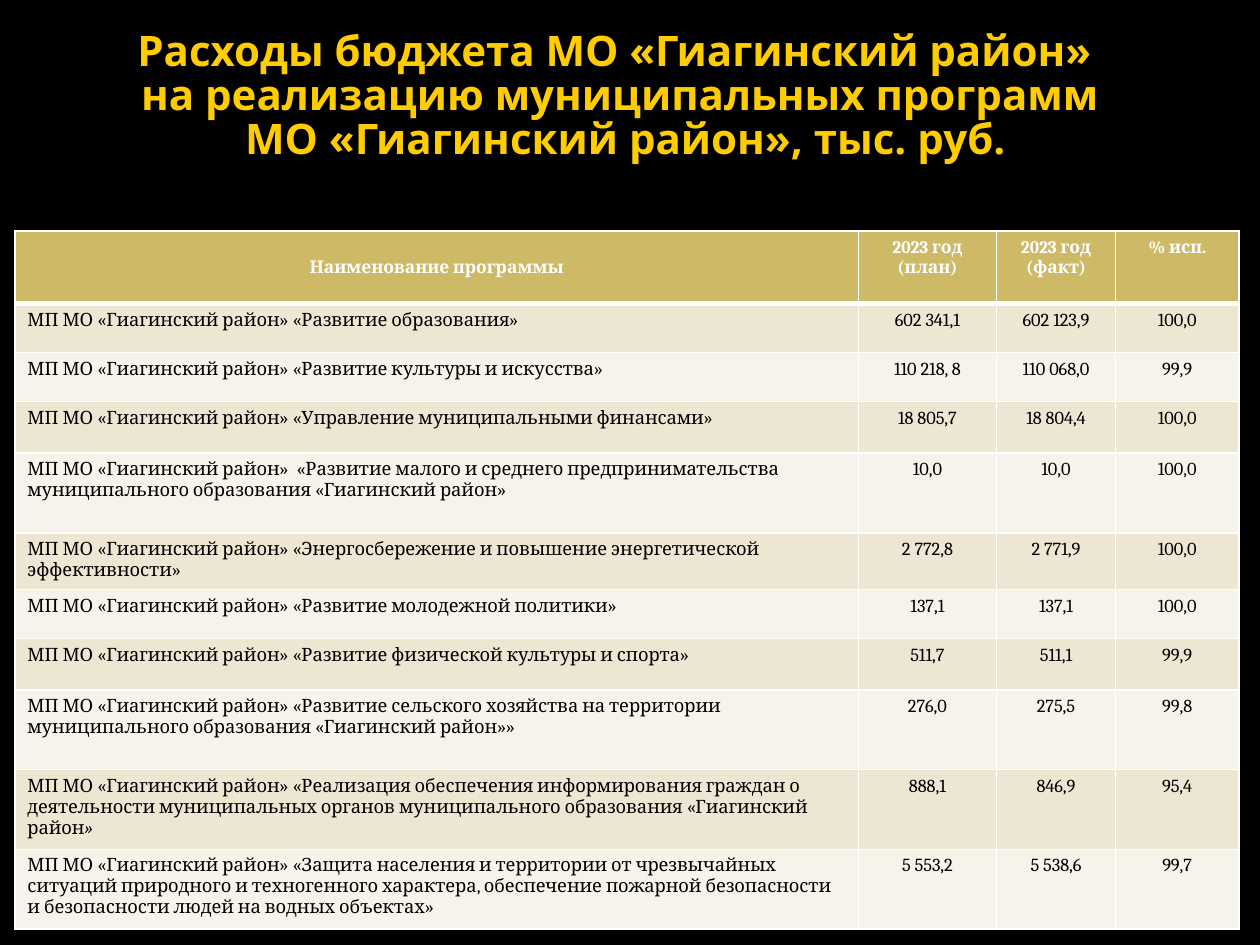
from pptx import Presentation
from pptx.dml.color import RGBColor
from pptx.enum.text import MSO_ANCHOR, PP_ALIGN
from pptx.oxml.ns import qn
from pptx.util import Pt
from lxml.etree import SubElement

TITLE = ("Расходы бюджета МО «Гиагинский район» \v"
         "на реализацию муниципальных программ\v"
         " МО «Гиагинский район», тыс. руб.")
HEADER = ("Наименование программы", "2023 год (план)", "2023 год (факт)", "% исп.")
PREFIX = "МП МО «Гиагинский район» "
PROGRAMS = [
    ("«Развитие образования»", "602 341,1", "602 123,9", "100,0"),
    ("«Развитие культуры и искусства»", "110 218, 8", "110 068,0", "99,9"),
    ("«Управление муниципальными финансами»", "18 805,7", "18 804,4", "100,0"),
    (" «Развитие малого и среднего предпринимательства муниципального "
     "образования «Гиагинский район»", "10,0", "10,0", "100,0"),
    ("«Энергосбережение и повышение энергетической эффективности»",
     "2 772,8", "2 771,9", "100,0"),
    ("«Развитие молодежной политики»", "137,1", "137,1", "100,0"),
    ("«Развитие физической культуры и спорта»", "511,7", "511,1", "99,9"),
    ("«Развитие сельского хозяйства на территории муниципального "
     "образования «Гиагинский район»»", "276,0", "275,5", "99,8"),
    ("«Реализация обеспечения информирования граждан о деятельности "
     "муниципальных органов муниципального образования «Гиагинский район»",
     "888,1", "846,9", "95,4"),
    ("«Защита населения и территории от чрезвычайных ситуаций природного и "
     "техногенного характера, обеспечение пожарной безопасности и "
     "безопасности людей на водных объектах»", "5 553,2", "5 538,6", "99,7"),
]
ITALIC_QUOTE_ROW = 9
COL_WIDTHS = (482, 79, 68, 70.5)
ROW_HEIGHTS = (41.5, 28, 28, 29.5, 45.5, 28, 28, 29.5, 45.5, 45.5, 45.5)
HEADER_FILL = "CEB966"
BAND_FILLS = ("F6F3EA", "EDE6D3")


def rgb(value):
    return RGBColor.from_string(value)


def style_font(font, name, size, color, bold=False):
    font.name, font.size, font.bold = name, Pt(size), bold
    font.color.rgb = rgb(color)


def add_title(s):
    tf = s.shapes.add_textbox(Pt(-11.5), Pt(15), Pt(731.5), Pt(81)).text_frame
    tf.word_wrap = True
    tf.vertical_anchor = MSO_ANCHOR.MIDDLE
    tf.text = TITLE
    p = tf.paragraphs[0]
    p.alignment = PP_ALIGN.CENTER
    p.line_spacing = 0.88
    for r in p.runs:
        style_font(r.font, "Open Sans", 24, "FFCC00", True)


def set_borders(cell, widths):
    """Draw white borders; widths are for left, right, top and bottom."""
    tc_pr = cell._tc.get_or_add_tcPr()
    for i, (side, width) in enumerate(zip("LRTB", widths)):
        ln = tc_pr.makeelement(qn(f"a:ln{side}"), {"w": str(Pt(width))})
        fill = SubElement(ln, qn("a:solidFill"))
        SubElement(fill, qn("a:srgbClr"), val="FFFFFF")
        tc_pr.insert(i, ln)


def fill_cell(cell, text, row, col):
    is_header = row == 0
    cell.fill.solid()
    cell.fill.fore_color.rgb = rgb(HEADER_FILL if is_header else BAND_FILLS[row % 2])
    set_borders(cell, (1, 1, 3 if row == 1 else 1, 3 if is_header else 1))
    if is_header and col == 0:
        cell.vertical_anchor = MSO_ANCHOR.MIDDLE
    cell.text_frame.text = text
    p = cell.text_frame.paragraphs[0]
    p.alignment = PP_ALIGN.CENTER if is_header or col else PP_ALIGN.LEFT
    if (row, col) == (ITALIC_QUOTE_ROW, 0):
        p.runs[0].text = text[:-1]
        r = p.add_run()
        r.text = text[-1]
        r.font.italic = True
    for r in p.runs:
        if is_header:
            style_font(r.font, "Cambria", 10, "FFFFFF", True)
        else:
            style_font(r.font, "Cambria", 10.5, "000000")


def add_program_table(s):
    rows = [HEADER] + [(PREFIX + name, *values) for name, *values in PROGRAMS]
    table = s.shapes.add_table(len(rows), len(HEADER), Pt(8.5), Pt(132),
                               Pt(sum(COL_WIDTHS)), Pt(sum(ROW_HEIGHTS))).table
    for column, width in zip(table.columns, COL_WIDTHS):
        column.width = Pt(width)
    for i, (texts, height) in enumerate(zip(rows, ROW_HEIGHTS)):
        table.rows[i].height = Pt(height)
        for j, text in enumerate(texts):
            fill_cell(table.cell(i, j), text, i, j)


def main():
    prs = Presentation()
    prs.slide_width, prs.slide_height = Pt(720), Pt(540)
    s = prs.slides.add_slide(prs.slide_layouts[6])
    s.background.fill.solid()
    s.background.fill.fore_color.rgb = rgb("000000")
    add_title(s)
    add_program_table(s)
    prs.save("out.pptx")


if __name__ == "__main__":
    main()
